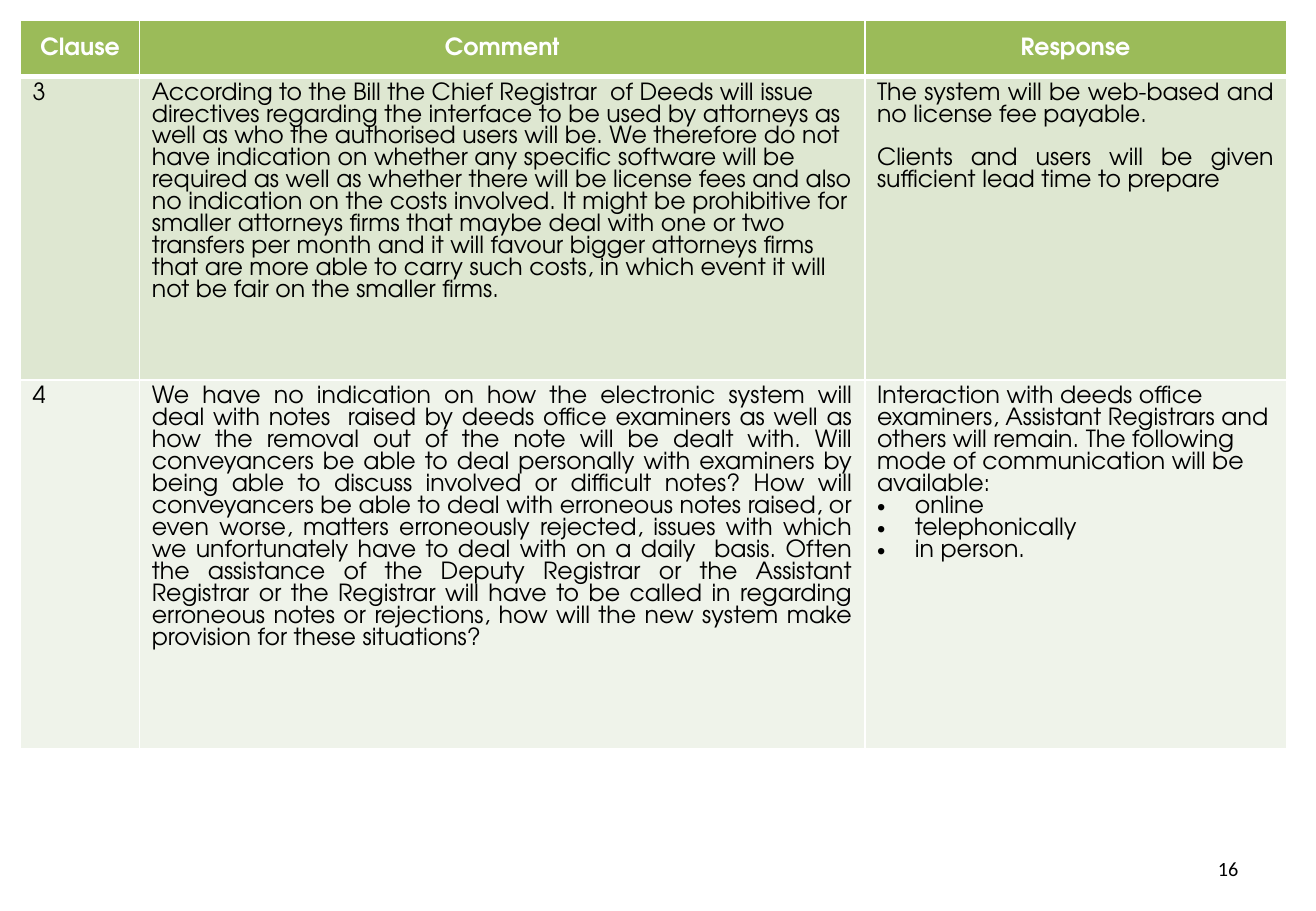
import pptx
import pptx.util
import pptx.dml.color
import pptx.enum.text
import pptx.oxml.ns
import lxml.etree

Cm, Pt = pptx.util.Cm, pptx.util.Pt
RGB = pptx.dml.color.RGBColor.from_string
ALIGN = pptx.enum.text.PP_ALIGN
ANCHOR = pptx.enum.text.MSO_ANCHOR

COLORS = {"header": "9BBB59", "odd": "DEE7D1", "even": "EFF3EA",
          "white": "FFFFFF", "black": "000000"}
FILLS = ["header", "odd", "even"]
COLS = [2.49, 15.16, 8.81]
ROWS = [1.17, 6.35, 7.7]
LINE = Pt(13)

L, C, J, BULLET = ({"alignment": ALIGN.LEFT}, {"alignment": ALIGN.CENTER},
                   {"alignment": ALIGN.JUSTIFY}, {"alignment": ALIGN.LEFT, "bullet": "•"})
J_GAP = {"alignment": ALIGN.JUSTIFY, "space_before": LINE}

CELLS = [
    [[("Clause", C)], [("Comment", C)], [("Response", C)]],
    [[("3", L)],
     [("According to the Bill the Chief Registrar  of Deeds will issue directives "
       "regarding the interface to be used by attorneys as well as who the authorised "
       "users will be. We therefore do not have indication on whether any specific "
       "software will be required as well as whether there will be license fees and "
       "also no indication on the costs involved. It might be prohibitive for smaller "
       "attorneys firms that maybe deal with one or two transfers per month and it will "
       "favour bigger attorneys firms that are more able to carry such costs, in which "
       "event it will not be fair on the smaller firms.", L)],
     [("The system will be web-based and no license fee payable.", J),
      ("Clients and users will be given sufficient lead time to prepare", J_GAP)]],
    [[("4", L)],
     [("We have no indication on how the electronic system will deal with notes  raised "
       "by deeds office examiners as well as how the removal out of the note will be "
       "dealt with. Will conveyancers be able to deal personally with examiners by being "
       "able to discuss involved or difficult notes? How will conveyancers be able to "
       "deal with erroneous notes raised, or even worse, matters erroneously rejected, "
       "issues with which we unfortunately have to deal with on a daily  basis. Often the "
       "assistance of the Deputy Registrar or the Assistant Registrar or the Registrar "
       "will have to be called in regarding erroneous notes or rejections, how will the "
       "new system make provision for these situations?", J)],
     [("Interaction with deeds office examiners, Assistant Registrars and others will "
       "remain. The following mode of communication will be available:", L),
      ("online", BULLET), ("telephonically", BULLET), ("in person.", BULLET)]],
]


def set_attrs(obj, values):
    """Set each named attribute on an object."""
    for name, value in values.items():
        setattr(obj, name, value)


def add_xml(parent, tag, **attrs):
    """Append a drawing element with the given attributes."""
    return lxml.etree.SubElement(parent, pptx.oxml.ns.qn(tag), attrs)


def write_paragraph(p, text, look, font, color):
    """Write one formatted paragraph, bulleted if its look asks for it."""
    look = dict(look)
    bullet = look.pop("bullet", None)
    set_attrs(p, look)
    if bullet:
        pPr = p._p.get_or_add_pPr()
        pPr.set("marL", str(Cm(0.79)))
        pPr.set("indent", str(-Cm(0.79)))
        add_xml(pPr, "a:buFont", typeface="Arial")
        add_xml(pPr, "a:buChar", char=bullet)
    r = p.add_run()
    r.text = text
    set_attrs(r.font, font)
    r.font.color.rgb = RGB(COLORS[color])


def set_borders(cell, row):
    """Draw white cell borders, heavier under the header row."""
    tcPr = cell._tc.get_or_add_tcPr()
    heavy = {0: "a:lnB", 1: "a:lnT"}.get(row)
    for tag in ("a:lnL", "a:lnR", "a:lnT", "a:lnB"):
        ln = add_xml(tcPr, tag, w=str(Pt(3 if tag == heavy else 1)))
        add_xml(add_xml(ln, "a:solidFill"), "a:srgbClr", val=COLORS["white"])


def add_comment_table(s, left, top):
    """Place the clause, comment and response table."""
    table = s.shapes.add_table(len(ROWS), len(COLS), Cm(left), Cm(top),
                               Cm(sum(COLS)), Cm(sum(ROWS))).table
    for column, width in zip(table.columns, COLS):
        column.width = Cm(width)
    for i, (row, height) in enumerate(zip(table.rows, ROWS)):
        row.height = Cm(height)
        header = i == 0
        font = {"name": "TeX Gyre Adventor", "size": Pt(14), "bold": header}
        for cell, paragraphs in zip(row.cells, CELLS[i]):
            set_borders(cell, i)
            cell.fill.solid()
            cell.fill.fore_color.rgb = RGB(COLORS[FILLS[i]])
            cell.vertical_anchor = ANCHOR.MIDDLE if header else ANCHOR.TOP
            tf = cell.text_frame
            for k, (text, look) in enumerate(paragraphs):
                p = tf.add_paragraph() if k else tf.paragraphs[0]
                write_paragraph(p, text, {"line_spacing": LINE, **look}, font,
                                "white" if header else "black")


def add_page_number(s, left, top, width, height):
    """Place the page number at the right of its box."""
    tf = s.shapes.add_textbox(Cm(left), Cm(top), Cm(width), Cm(height)).text_frame
    set_attrs(tf, {"word_wrap": True, "vertical_anchor": ANCHOR.MIDDLE})
    write_paragraph(tf.paragraphs[0], "16", {"alignment": ALIGN.RIGHT},
                    {"name": "Calibri", "size": Pt(12)}, "black")


def main():
    """Build and save the slide."""
    prs = pptx.Presentation()
    set_attrs(prs, {"slide_width": Cm(27.51), "slide_height": Cm(19.05)})
    s = prs.slides.add_slide(prs.slide_layouts[6])
    add_comment_table(s, 0.43, 0.43)
    add_page_number(s, 19.71, 17.65, 6.43, 1.02)
    prs.save("out.pptx")


if __name__ == "__main__":
    main()
